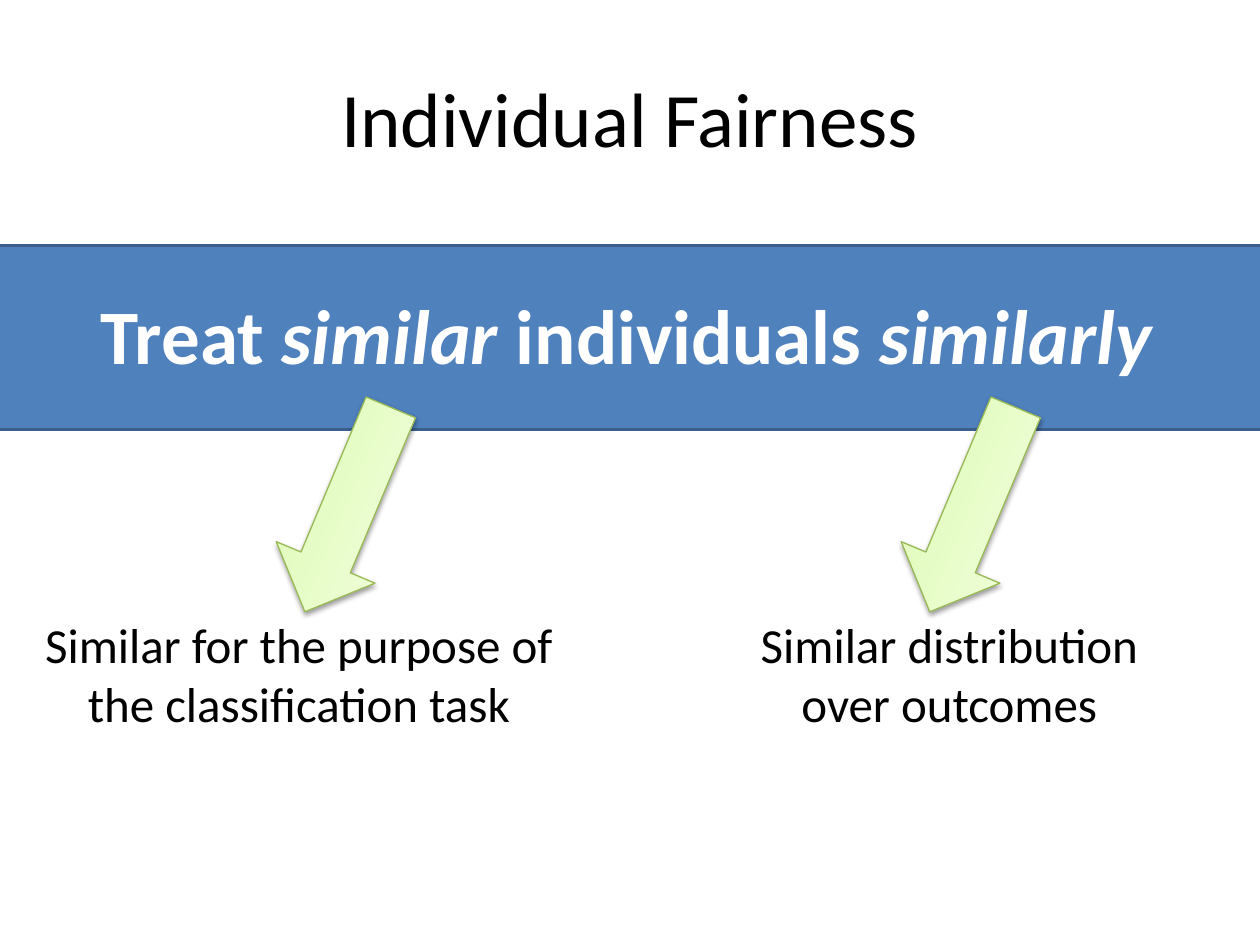
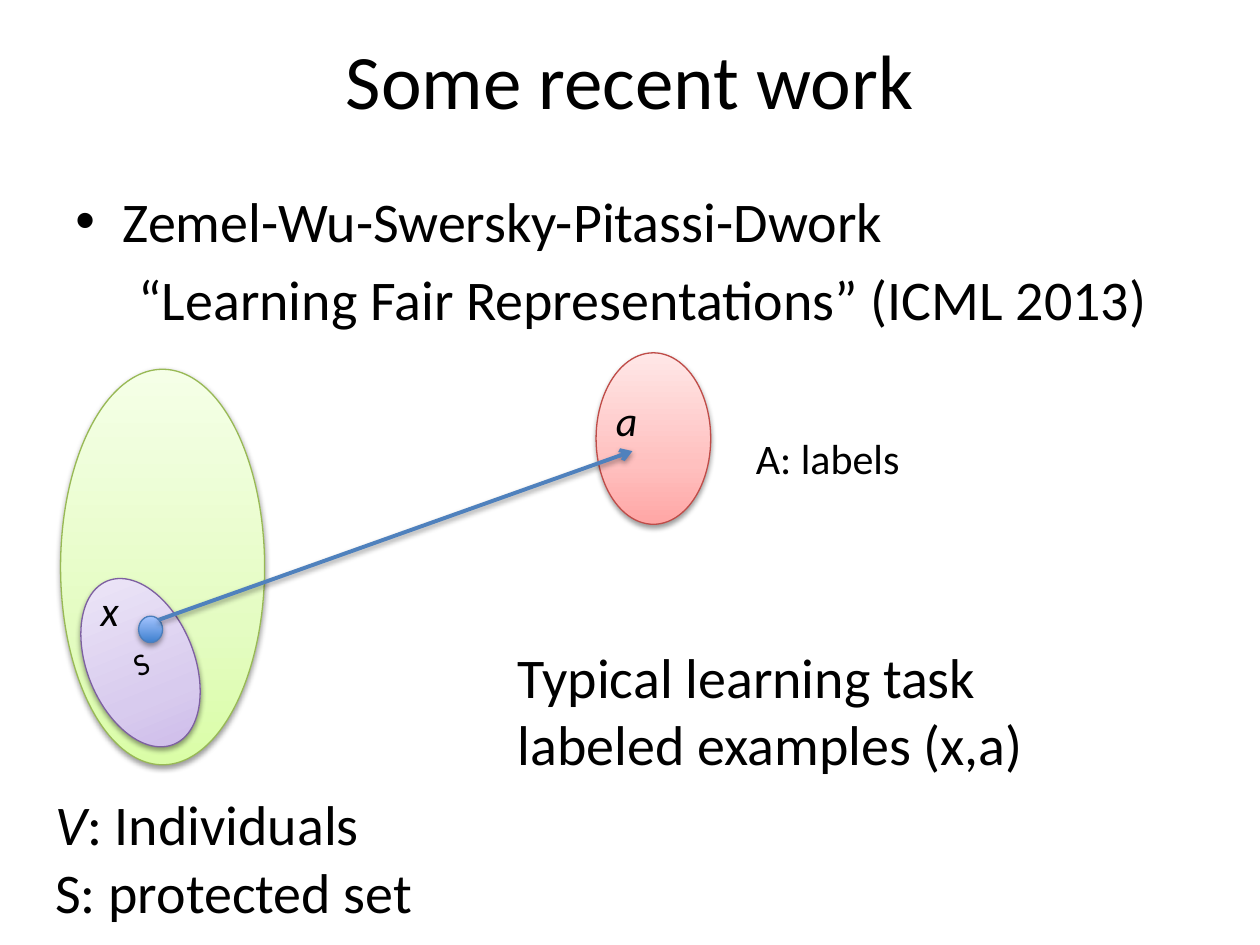
from lxml import etree
from pptx import Presentation
from pptx.dml.color import RGBColor
from pptx.enum.shapes import MSO_CONNECTOR, MSO_SHAPE
from pptx.enum.text import MSO_ANCHOR, MSO_AUTO_SIZE, PP_ALIGN
from pptx.oxml.ns import qn
from pptx.util import Pt

RECT, OVAL, ARROW = MSO_SHAPE.RECTANGLE, MSO_SHAPE.OVAL, MSO_SHAPE.RIGHT_ARROW
STRAIGHT = MSO_CONNECTOR.STRAIGHT
LEFT, CENTER = PP_ALIGN.LEFT, PP_ALIGN.CENTER
TOP, MIDDLE = MSO_ANCHOR.TOP, MSO_ANCHOR.MIDDLE

# Shared style
FONT = "Calibri"
BLACK, WHITE, BLUE, DARK_BLUE = "000000", "FFFFFF", "4F81BD", "3A5F8C"
# Each look: outline colour, then gradient stops from bottom to top
GREEN = ("98B955", {0: "DAFDA7", 35: "E4FCC2", 100: "F5FFE7"})
PURPLE = ("7D60A0", {0: "C9B5E8", 35: "D8CBEE", 100: "F0EAF9"})
RED = ("BF4C48", {0: "FFA6A5", 35: "FFC0BF", 100: "FFE7E7"})
DOT_BLUE = ("4B7EBC", {0: "3F80CE", 100: "A4C4FF"})


def rgb(color):
    return RGBColor.from_string(color)


def add_child(parent, tag, **attributes):
    child = etree.SubElement(parent, qn(tag))
    for name, value in attributes.items():
        child.set(name, str(value))
    return child


def add_shadow(properties):
    """Soft shadow falling straight down."""
    effects = add_child(properties, "a:effectLst")
    shadow = add_child(effects, "a:outerShdw", blurRad=Pt(3.1), dist=Pt(1.6),
                       dir=5400000, rotWithShape=0)
    color = add_child(shadow, "a:srgbClr", val=BLACK)
    add_child(color, "a:alpha", val=38000)


def write_text(frame, text, size=32, color=BLACK, bold=False, align=LEFT):
    """One paragraph per line; words between asterisks are italic."""
    for index, line in enumerate(text.split("\n")):
        para = frame.add_paragraph() if index else frame.paragraphs[0]
        para.alignment = align
        for part, words in enumerate(line.split("*")):
            if not words:
                continue
            span = para.add_run()
            span.text = words
            font = span.font
            font.name, font.size, font.bold = FONT, Pt(size), bold
            font.italic = part % 2 == 1
            font.color.rgb = rgb(color)


def add_text(page, text, left, top, width, height, wrap=False, anchor=TOP, **style):
    box = page.shapes.add_textbox(Pt(left), Pt(top), Pt(width), Pt(height))
    frame = box.text_frame
    frame.word_wrap = wrap
    frame.auto_size = MSO_AUTO_SIZE.NONE if wrap else MSO_AUTO_SIZE.SHAPE_TO_FIT_TEXT
    frame.vertical_anchor = anchor
    write_text(frame, text, **style)
    return box


def add_title(page, text, top):
    add_text(page, text, 36, top, 648, 90, wrap=True, anchor=MIDDLE,
             size=44, align=CENTER)


def add_band(page, left, top, width, height):
    band = page.shapes.add_shape(RECT, Pt(left), Pt(top), Pt(width), Pt(height))
    band.shadow.inherit = False
    band.fill.solid()
    band.fill.fore_color.rgb = rgb(BLUE)
    band.line.color.rgb = rgb(DARK_BLUE)
    band.line.width = Pt(2)


def add_glossy(page, kind, look, left, top, width, height, rotation=0):
    """Shape with an upward gradient, a thin outline and a shadow."""
    outline, stops = look
    shape = page.shapes.add_shape(kind, Pt(left), Pt(top), Pt(width), Pt(height))
    shape.rotation = rotation
    shape.line.color.rgb = rgb(outline)
    shape.line.width = Pt(0.75)
    shape.fill.gradient()
    properties = shape._element.spPr
    gradient = properties.find(qn("a:gradFill"))
    for child in list(gradient):
        gradient.remove(child)
    stop_list = add_child(gradient, "a:gsLst")
    for position, color in stops.items():
        stop = add_child(stop_list, "a:gs", pos=position * 1000)
        add_child(stop, "a:srgbClr", val=color)
    add_child(gradient, "a:lin", ang=270 * 60000, scaled=0)
    add_shadow(properties)
    return shape


def add_arrow_line(page, x1, y1, x2, y2):
    line = page.shapes.add_connector(STRAIGHT, Pt(x1), Pt(y1), Pt(x2), Pt(y2))
    line.line.color.rgb = rgb(BLUE)
    line.line.width = Pt(2.25)
    add_child(line.line._get_or_add_ln(), "a:tailEnd", type="arrow")
    add_shadow(line._element.spPr)


def add_citation(page, authors, paper):
    box = add_text(page, f"{authors}\n{paper}", 36, 103, 648, 99, wrap=True)
    author_para, paper_para = box.text_frame.paragraphs
    for para in (author_para, paper_para):
        para.space_before = Pt(6.4)
    bullet = author_para._p.get_or_add_pPr()
    bullet.set("marL", str(Pt(27)))
    bullet.set("indent", str(Pt(-27)))
    add_child(bullet, "a:buFont", typeface="Arial")
    add_child(bullet, "a:buChar", char="•")
    paper_para._p.get_or_add_pPr().set("marL", str(Pt(36)))


def build_fairness(page):
    add_band(page, -31, 140.4, 798.5, 105.1)
    add_title(page, "Individual Fairness", 21.6)
    add_text(page, "Treat *similar* individuals *similarly*", 50.4, 160.6, 632, 60.5,
             size=44, color=WHITE, bold=True)

    # What each italic word means
    meanings = [
        ("Similar for the purpose of\nthe classification task", 16.6, 308.2, 135.4),
        ("Similar distribution\nover outcomes", 426.2, 232.6, 492.5),
    ]
    for text, left, width, arrow_left in meanings:
        add_text(page, text, left, 347.8, width, 75, size=28, align=CENTER)
        add_glossy(page, ARROW, GREEN, arrow_left, 260.6, 126.7, 61.2, rotation=112.8)


def build_recent_work(page):
    add_title(page, "Some recent work", 0)
    add_citation(page, "Zemel-Wu-Swersky-Pitassi-Dwork",
                 "“Learning Fair Representations” (ICML 2013)")

    # Individuals with the protected set
    add_glossy(page, OVAL, GREEN, 34.6, 211, 116.6, 226)
    protected = add_glossy(page, OVAL, PURPLE, 49.7, 328.3, 61.2, 100.8, rotation=337.9)
    protected.text_frame.vertical_anchor = MIDDLE
    write_text(protected.text_frame, "S", size=18, align=CENTER)
    add_text(page, "*V*: Individuals\nS: protected set", 24.5, 447.8, 224, 85)
    add_text(page, "*x*", 50.4, 330.5, 31, 36, size=24)
    add_glossy(page, OVAL, DOT_BLUE, 79.2, 352.1, 13.7, 15.1)

    # Labels
    add_glossy(page, OVAL, RED, 340.6, 201.6, 65.5, 98)
    add_arrow_line(page, 90.7, 354.2, 361.4, 257.8)
    add_text(page, "*a*", 344.9, 221.8, 33, 36, size=24)
    add_text(page, "A: labels", 424.8, 243.4, 102.2, 36, size=24)
    add_text(page, "Typical learning task\nlabeled examples (x,a)", 288.7, 363.6, 307.4, 85)


def main():
    deck = Presentation()
    deck.slide_width, deck.slide_height = Pt(720), Pt(540)
    blank = deck.slide_layouts[6]
    for build in (build_fairness, build_recent_work):
        build(deck.slides.add_slide(blank))
    deck.save("out.pptx")


if __name__ == "__main__":
    main()
